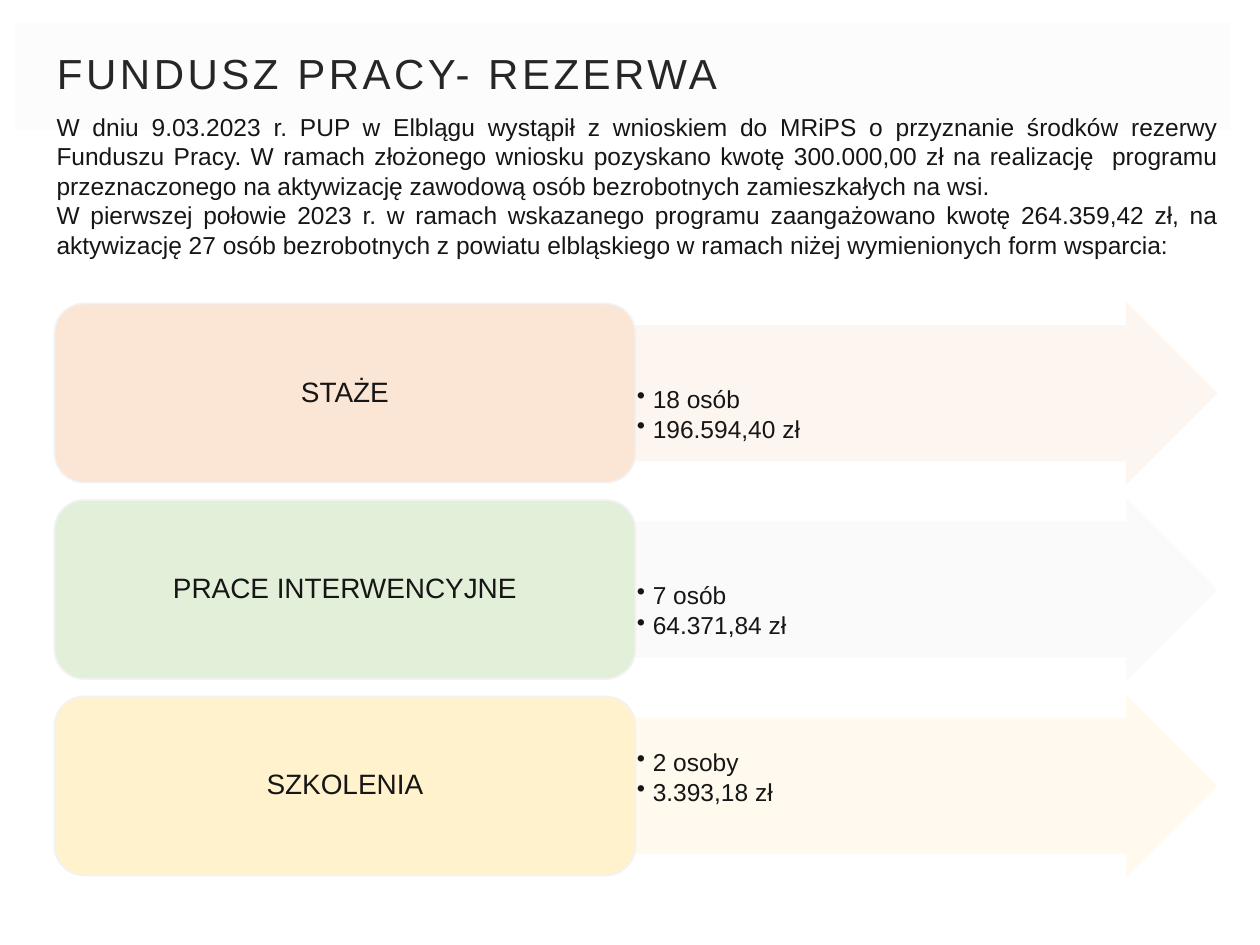
from lxml import etree
from pptx import Presentation
from pptx import util as u
from pptx.dml.color import RGBColor
from pptx.enum import shapes, text
from pptx.oxml import ns

TEXT_COLOR = "171616"


def paint(color_format, color, opacity=None):
    """Set a fill's solid colour, with an optional opacity in percent."""
    color_format.solid()
    color_format.fore_color.rgb = RGBColor.from_string(color)
    if opacity is not None:
        rgb = color_format._xPr.find(".//" + ns.qn("a:srgbClr"))
        etree.SubElement(rgb, ns.qn("a:alpha"), val=str(opacity * 1000))


def write(shape, content, size, color, alignment, anchor, insets, line_spacing):
    """Fill a shape with text; insets are left, top, right, bottom in cm."""
    frame = shape.text_frame
    frame.word_wrap = True
    frame.vertical_anchor = anchor
    frame.margin_left, frame.margin_top, frame.margin_right, frame.margin_bottom = map(u.Cm, insets)
    frame.text = content
    for paragraph in frame.paragraphs:
        paragraph.alignment = alignment
        paragraph.line_spacing = line_spacing
        font = paragraph.runs[0].font
        font.name = "Arial"
        font.size = u.Pt(size)
        font.color.rgb = RGBColor.from_string(color)
    return frame.paragraphs


presentation = Presentation()
presentation.slide_width = u.Cm(25.4)
presentation.slide_height = u.Cm(19.05)
slide = presentation.slides.add_slide(presentation.slide_layouts[6])

# Title band
title = slide.shapes.add_shape(
    shapes.MSO_SHAPE.RECTANGLE, u.Cm(0.3), u.Cm(0.46), u.Cm(24.51), u.Cm(2.16))
title.shadow.inherit = False
paint(title.fill, "FCFCFC")
title.line.fill.background()
title_paragraph = write(title, "FUNDUSZ PRACY- REZERWA", 24, "262626", text.PP_ALIGN.LEFT,
                        text.MSO_ANCHOR.MIDDLE, (0.85, 0.51, 0.51, 0.51), 0.9)[0]
title_paragraph.runs[0]._r.get_or_add_rPr().set("spc", "200")

# Forms of support: name, box colour, arrow colour, results, lines left free above them
support_forms = [
    ("STAŻE", "FBE5D5", "FDF5EF", "18 osób\n196.594,40 zł", 2),
    ("PRACE INTERWENCYJNE", "E2EFD9", "FAFAFA", "7 osób\n64.371,84 zł", 2),
    ("SZKOLENIA", "FFF2CC", "FFFAEC", "2 osoby\n3.393,18 zł", 1),
]
left, first_top, row_pitch = 1.1, 6.12, 3.96
width, height = 11.71, 3.61

for row, (name, box_color, arrow_color, results, free_lines) in enumerate(support_forms):
    top = first_top + row * row_pitch

    arrow = slide.shapes.add_shape(
        shapes.MSO_SHAPE.RIGHT_ARROW, u.Cm(left + width), u.Cm(top), u.Cm(width), u.Cm(height))
    arrow.shadow.inherit = False
    arrow.adjustments[0] = 0.75
    arrow.adjustments[1] = 0.5
    paint(arrow.fill, arrow_color, 90)
    arrow.line.width = u.Pt(1)
    paint(arrow.line.fill, arrow_color, 90)
    for paragraph in write(arrow, results, 14, TEXT_COLOR, text.PP_ALIGN.LEFT,
                           text.MSO_ANCHOR.TOP, (0.03, 0.03 + 0.6 * free_lines, 0.03, 0.03), 0.9):
        paragraph.space_after = u.Pt(2.1)
        properties = paragraph._p.get_or_add_pPr()
        properties.set("marL", str(u.Cm(0.32)))
        properties.set("indent", str(u.Cm(-0.32)))
        etree.SubElement(properties, ns.qn("a:buChar"), char="•")

    box = slide.shapes.add_shape(
        shapes.MSO_SHAPE.ROUNDED_RECTANGLE, u.Cm(left), u.Cm(top), u.Cm(width), u.Cm(height))
    box.shadow.inherit = False
    paint(box.fill, box_color)
    box.line.width = u.Pt(1)
    paint(box.line.fill, "F2F2F2")
    write(box, name, 16, TEXT_COLOR, text.PP_ALIGN.CENTER,
          text.MSO_ANCHOR.MIDDLE, (0.18, 0.08, 0.18, 0.08), 0.9)

# Introduction
introduction = slide.shapes.add_textbox(u.Cm(0.89), u.Cm(2.13), u.Cm(23.93), u.Cm(3.25))
write(
    introduction,
    "W dniu 9.03.2023 r. PUP w Elblągu wystąpił z wnioskiem do MRiPS o przyznanie środków "
    "rezerwy Funduszu Pracy. W ramach złożonego wniosku pozyskano kwotę 300.000,00 zł na "
    "realizację  programu przeznaczonego na aktywizację zawodową osób bezrobotnych "
    "zamieszkałych na wsi.\n"
    "W pierwszej połowie 2023 r. w ramach wskazanego programu zaangażowano kwotę "
    "264.359,42 zł, na aktywizację 27 osób bezrobotnych z powiatu elbląskiego w ramach "
    "niżej wymienionych form wsparcia:",
    14, TEXT_COLOR, text.PP_ALIGN.JUSTIFY, text.MSO_ANCHOR.TOP, (0.25, 0.13, 0.25, 0.13), 1.0)

presentation.save("out.pptx")
